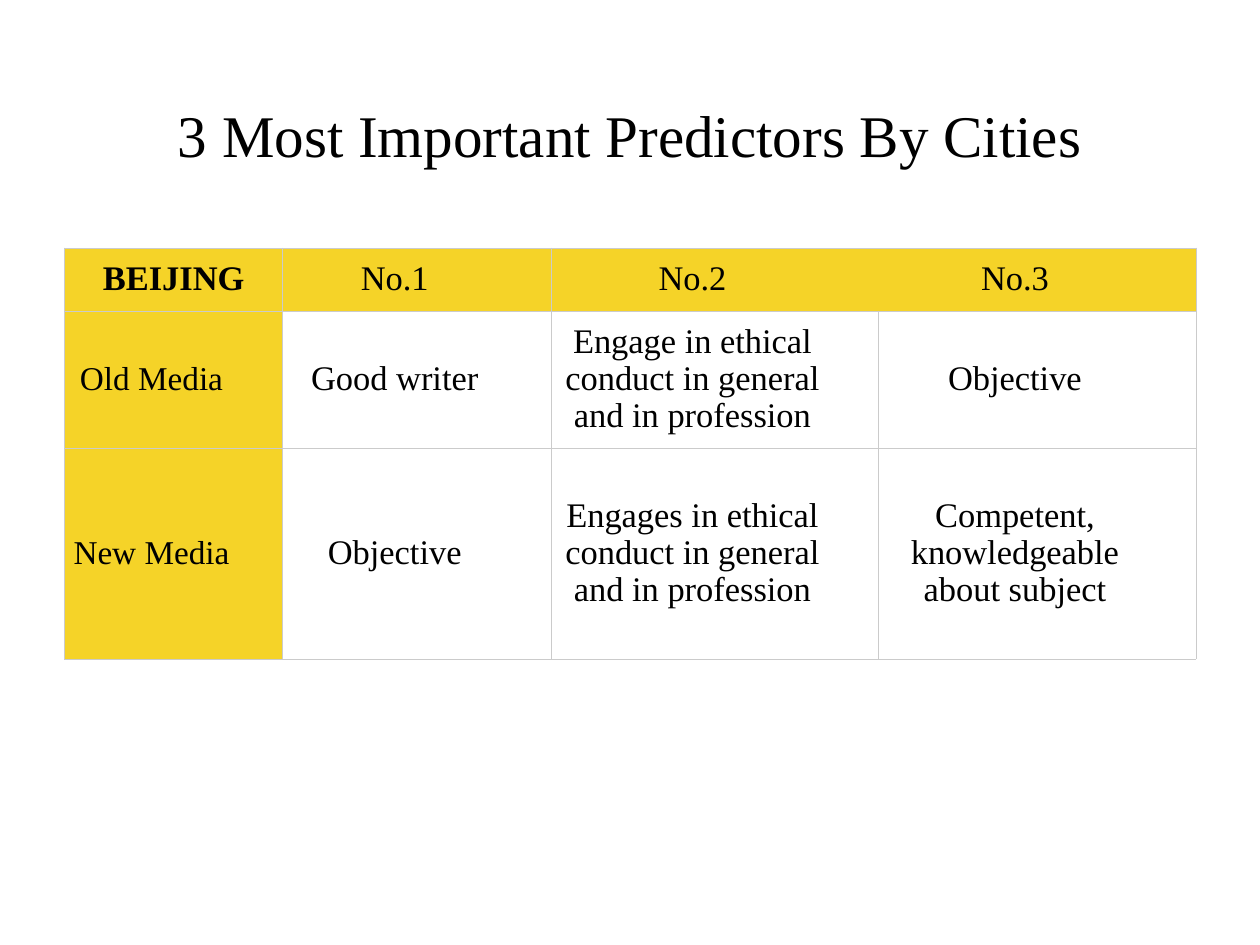
import pptx
import pptx.util
import pptx.dml.color
import pptx.enum.text
from lxml import etree

Inches, Pt = pptx.util.Inches, pptx.util.Pt
PP_ALIGN, ANCHOR = pptx.enum.text.PP_ALIGN, pptx.enum.text.MSO_ANCHOR

# Content
TITLE = "3 Most Important Predictors By Cities"
ROWS = [
    ["BEIJING", "No.1", "No.2", "No.3"],
    ["Old Media", "Good writer",
     "Engage in ethical conduct in general and in profession", "Objective"],
    ["New Media", "Objective",
     "Engages in ethical conduct in general and in profession",
     "Competent, knowledgeable about subject"],
]
COL_WIDTHS = [2.46, 3.03, 3.69, 3.59]
ROW_HEIGHTS = [0.71, 1.55, 2.38]
FONT, BLACK, WHITE, YELLOW, GRID = "Times New Roman", "000000", "FFFFFF", "F5D328", "CBCBCB"
PAD, SHIFT = 0.07, 0.5  # cell padding; extra right padding that moves text left


def color(value):
    return pptx.dml.color.RGBColor.from_string(value)


def write(tf, text, size, spacing, bold=False):
    tf.word_wrap = True
    p = tf.paragraphs[0]
    p.alignment = PP_ALIGN.CENTER
    p.line_spacing = spacing
    r = p.add_run()
    r.text = text
    r.font.name, r.font.size, r.font.bold = FONT, Pt(size), bold
    r.font.color.rgb = color(BLACK)


def add_borders(cell, hidden):
    tc_pr = cell._tc.get_or_add_tcPr()
    ns = pptx.oxml.ns.qn
    for i, side in enumerate(("lnL", "lnR", "lnT", "lnB")):
        ln = etree.Element(ns("a:" + side), w=str(Pt(0.5)))
        if side in hidden:
            etree.SubElement(ln, ns("a:noFill"))
        else:
            fill = etree.SubElement(ln, ns("a:solidFill"))
            etree.SubElement(fill, ns("a:srgbClr"), val=GRID)
        tc_pr.insert(i, ln)


prs = pptx.Presentation()
prs.slide_width, prs.slide_height = Inches(14.22), Inches(10.67)
s = prs.slides.add_slide(prs.slide_layouts[6])

# Title
tf = s.shapes.add_textbox(Inches(1.04), Inches(0.25), Inches(12.14), Inches(2.36)).text_frame
tf.margin_left = tf.margin_right = tf.margin_top = tf.margin_bottom = 0
tf.vertical_anchor = ANCHOR.MIDDLE
write(tf, TITLE, 48, 1.2)

# Table
table = s.shapes.add_table(
    len(ROWS), len(COL_WIDTHS), Inches(0.73), Inches(2.8),
    Inches(sum(COL_WIDTHS)), Inches(sum(ROW_HEIGHTS))).table
table.first_row = table.horz_banding = False
for column, width in zip(table.columns, COL_WIDTHS):
    column.width = Inches(width)
for row, height in zip(table.rows, ROW_HEIGHTS):
    row.height = Inches(height)

for i, texts in enumerate(ROWS):
    for j, text in enumerate(texts):
        cell = table.cell(i, j)
        corner = i == j == 0
        cell.vertical_anchor = ANCHOR.MIDDLE
        cell.margin_top = cell.margin_bottom = 0
        cell.margin_left = Inches(PAD)
        cell.margin_right = Inches(PAD if corner else PAD + SHIFT)
        cell.fill.solid()
        cell.fill.fore_color.rgb = color(YELLOW if i == 0 or j == 0 else WHITE)
        # No.2 and No.3 share a header band without a divider
        add_borders(cell, {(0, 2): ["lnR"], (0, 3): ["lnL"]}.get((i, j), []))
        write(cell.text_frame, text, 27 if j == 0 and i > 0 else 28, 0.97, corner)

prs.save("out.pptx")
